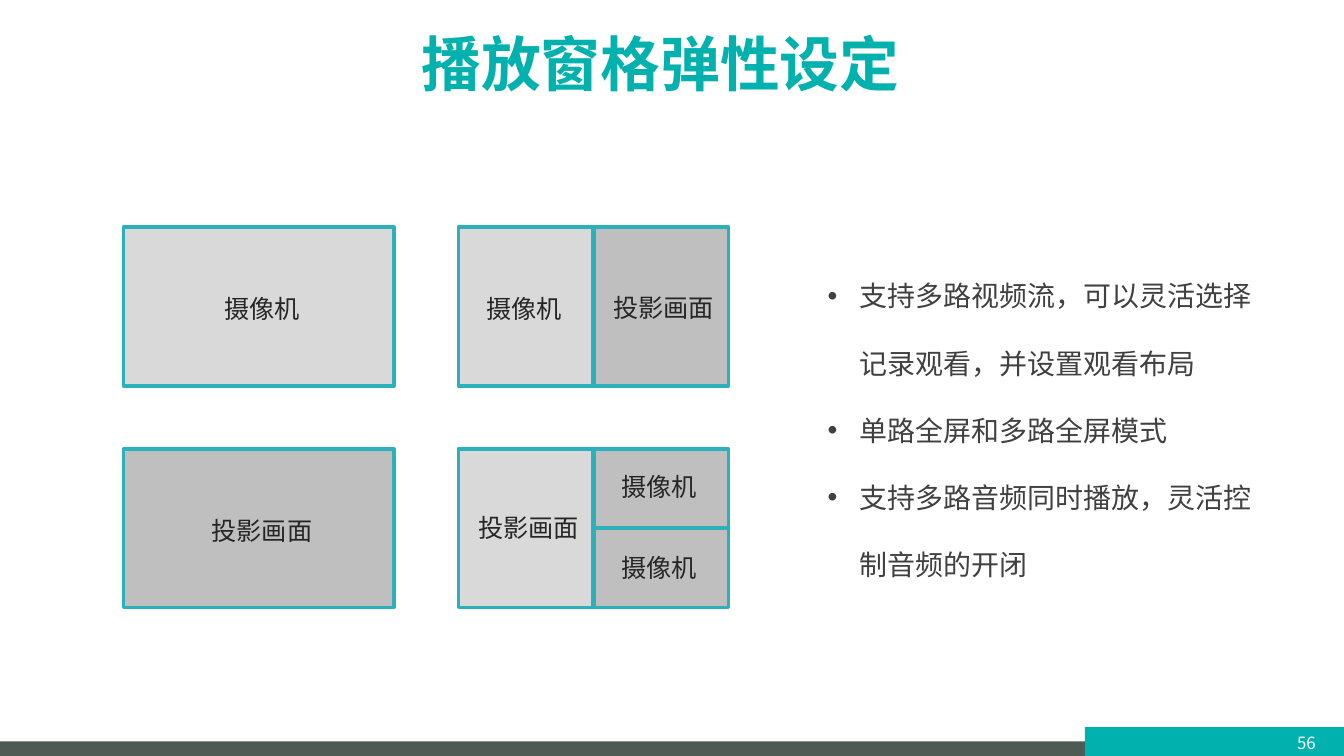
"""Build the slide on flexible playback pane layouts."""
from pptx import Presentation
from pptx.dml.color import RGBColor
from pptx.enum.shapes import MSO_CONNECTOR, MSO_SHAPE
from pptx.enum.text import MSO_ANCHOR, PP_ALIGN
from pptx.oxml.ns import qn
from pptx.util import Pt
from lxml.etree import SubElement

FONT = "Noto Sans CJK SC"
TEAL, BORDER = "00B1AD", "2CB1BC"
LIGHT, DARK = "D9D9D9", "BFBFBF"
PANEL_WIDTH, PANEL_HEIGHT = 144.7, 85
HALF = PANEL_WIDTH / 2
LEFT, RIGHT = 66.2, 245.6
TOP, BOTTOM = 121.7, 240.5
MIDDLE = RIGHT + HALF


def color(value):
    return RGBColor.from_string(value)


def add_text(box, lines, size, fill, bold=False, align=PP_ALIGN.CENTER, bullet=False):
    left, top, width, height = box
    shape = slide.shapes.add_textbox(Pt(left), Pt(top), Pt(width), Pt(height))
    frame = shape.text_frame
    frame.word_wrap = True
    frame.vertical_anchor = MSO_ANCHOR.MIDDLE
    frame.margin_top = frame.margin_bottom = Pt(3.6)
    frame.margin_left = frame.margin_right = Pt(7.2 if bullet else 0)
    frame.text = "\n".join(lines)
    for paragraph in frame.paragraphs:
        paragraph.alignment = align
        if bullet:
            paragraph.line_spacing = 2.0
            properties = paragraph._p.get_or_add_pPr()
            properties.set("marL", str(Pt(16.9)))
            properties.set("indent", str(-Pt(16.9)))
            SubElement(properties, qn("a:buFont")).set("typeface", "Arial")
            SubElement(properties, qn("a:buChar")).set("char", "•")
        font = paragraph.font
        font.name, font.size, font.bold = FONT, Pt(size), bold
        font.color.rgb = color(fill)
        defaults = paragraph._p.pPr.find(qn("a:defRPr"))
        SubElement(defaults, qn("a:ea")).set("typeface", FONT)


presentation = Presentation()
presentation.slide_width, presentation.slide_height = Pt(720), Pt(405)
slide = presentation.slides.add_slide(presentation.slide_layouts[6])

rectangles = [
    (0, 397.2, 720, 7.8, "4E5A54", None),
    (581.2, 389.6, 138.8, 15.4, TEAL, None),
    (LEFT, TOP, PANEL_WIDTH, PANEL_HEIGHT, LIGHT, BORDER),
    (LEFT, BOTTOM, PANEL_WIDTH, PANEL_HEIGHT, DARK, BORDER),
]
for top in (TOP, BOTTOM):
    rectangles += [
        (RIGHT, top, HALF, PANEL_HEIGHT, LIGHT, None),
        (MIDDLE, top, HALF, PANEL_HEIGHT, DARK, None),
        (RIGHT, top, PANEL_WIDTH, PANEL_HEIGHT, None, BORDER),
    ]
for left, top, width, height, fill, line in rectangles:
    shape = slide.shapes.add_shape(
        MSO_SHAPE.RECTANGLE, Pt(left), Pt(top), Pt(width), Pt(height))
    shape.shadow.inherit = False
    if fill:
        shape.fill.solid()
        shape.fill.fore_color.rgb = color(fill)
    else:
        shape.fill.background()
    if line:
        shape.line.color.rgb = color(line)
        shape.line.width = Pt(2)
    else:
        shape.line.fill.background()

dividers = [
    (MIDDLE, TOP, MIDDLE, TOP + PANEL_HEIGHT),
    (MIDDLE, BOTTOM, MIDDLE, BOTTOM + PANEL_HEIGHT),
    (MIDDLE, BOTTOM + PANEL_HEIGHT / 2, MIDDLE + HALF, BOTTOM + PANEL_HEIGHT / 2),
]
for divider in dividers:
    connector = slide.shapes.add_connector(
        MSO_CONNECTOR.STRAIGHT, *(Pt(value) for value in divider))
    connector.line.color.rgb = color(BORDER)
    connector.line.width = Pt(2.25)
    SubElement(connector._element.spPr, qn("a:effectLst"))

labels = [
    ("摄像机", 140.4, 165.2),
    ("投影画面", 140.4, 284),
    ("摄像机", 280.7, 165),
    ("投影画面", 355.4, 164.7),
    ("投影画面", 283.4, 282.4),
    ("摄像机", 353, 260.6),
    ("摄像机", 353, 303.7),
]
for label, center_x, center_y in labels:
    add_text((center_x - 34.6, center_y - 12, 69.2, 24), [label], 13.5, "262626")

add_text((33.1, 12.2, 641.5, 43.2), ["播放窗格弹性设定"], 32, TEAL, bold=True)
add_text((686.9, 387.4, 25.9, 21.6), ["56"], 9, "FFFFFF")
add_text(
    (436.3, 126.7, 250.6, 189.4),
    [
        "支持多路视频流，可以灵活选择记录观看，并设置观看布局",
        "单路全屏和多路全屏模式",
        "支持多路音频同时播放，灵活控制音频的开闭",
    ],
    15, "404040", align=PP_ALIGN.LEFT, bullet=True)

presentation.save("out.pptx")
